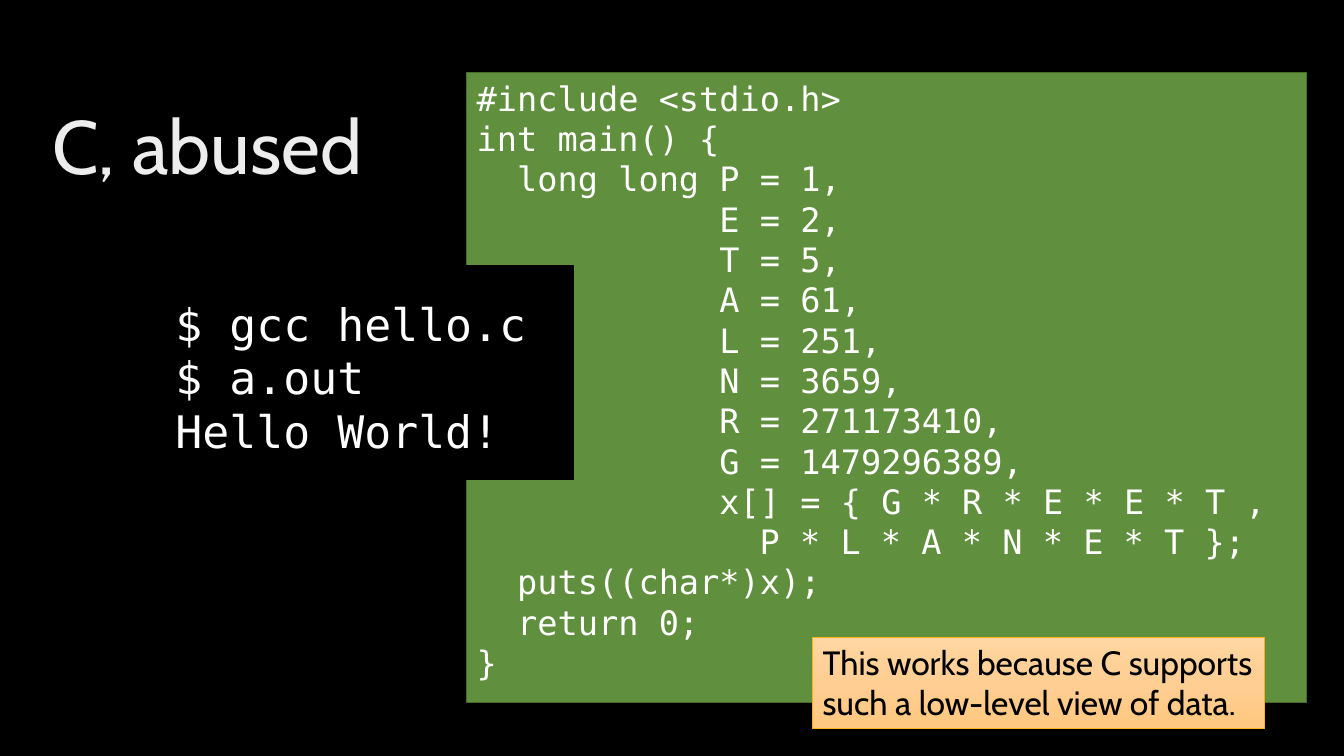
from dataclasses import dataclass

from lxml.etree import SubElement
from pptx import Presentation
from pptx.dml.color import RGBColor
from pptx.dml.fill import FillFormat
from pptx.enum.shapes import MSO_SHAPE
from pptx.enum.text import MSO_ANCHOR, MSO_AUTO_SIZE, PP_ALIGN
from pptx.oxml.ns import qn
from pptx.oxml.xmlchemy import BaseOxmlElement
from pptx.slide import Slide
from pptx.text.text import TextFrame
from pptx.util import Inches, Pt


@dataclass(frozen=True)
class Gradient:
    stops: tuple[tuple[int, str], ...]  # percent, colour
    angle: int  # clockwise degrees


@dataclass(frozen=True)
class Theme:
    background: str = "000000"
    code_fill: str = "608F3D"
    code_line: str = "476A2D"
    note_line: str = "FCB11C"
    light_text: str = "FFFFFF"
    dark_text: str = "000000"
    title_fill: Gradient = Gradient(((0, "BFBFBF"), (28, "EDEDED"), (100, "FFFFFF")), 80)
    note_fill: Gradient = Gradient(((0, "FFD5A1"), (50, "FFCE93"), (100, "FFC77F")), 90)
    prose_font: str = "Cabin"
    code_font: str = "DejaVu Sans Mono"
    title_size: int = 54
    terminal_size: int = 32
    body_size: int = 24


THEME = Theme()


@dataclass(frozen=True)
class Panel:
    box: tuple[float, float, float, float]
    fill: str | Gradient
    line: str
    text: str
    color: str
    font: str
    size: int
    line_width: float = 1
    insets: tuple[float, float, float, float] = (0.1, 0.05, 0.1, 0.05)
    anchor: MSO_ANCHOR = MSO_ANCHOR.TOP
    auto_size: MSO_AUTO_SIZE = MSO_AUTO_SIZE.NONE


CODE = """#include <stdio.h>
int main() {
  long long P = 1,
            E = 2,
            T = 5,
            A = 61,
            L = 251,
            N = 3659,
            R = 271173410,
            G = 1479296389,
            x[] = { G * R * E * E * T ,
\t\t         P * L * A * N * E * T };
  puts((char*)x);
  return 0;
}"""

TERMINAL = """$ gcc hello.c
$ a.out
Hello World!"""

PANELS = (
    # Source code
    Panel((4.63, 0.72, 8.33, 6.25), THEME.code_fill, THEME.code_line, CODE,
          THEME.light_text, THEME.code_font, THEME.body_size),
    # Terminal session
    Panel((1.54, 2.64, 4.15, 2.12), THEME.background, THEME.background, TERMINAL,
          THEME.light_text, THEME.code_font, THEME.terminal_size,
          insets=(0.2, 0.3, 0.1, 0.05)),
    # Explanatory note
    Panel((8.06, 6.32, 4.48, 0.91), THEME.note_fill, THEME.note_line,
          "This works because C supports such a low-level view of data.",
          THEME.dark_text, THEME.prose_font, THEME.body_size, line_width=0.5,
          auto_size=MSO_AUTO_SIZE.SHAPE_TO_FIT_TEXT),
)


def apply_fill(fill: FillFormat, owner: BaseOxmlElement, paint: str | Gradient) -> None:
    """Fill with a plain colour or a gradient; owner holds the fill element."""
    if isinstance(paint, str):
        fill.solid()
        fill.fore_color.rgb = RGBColor.from_string(paint)
        return
    fill.gradient()
    fill.gradient_angle = 360 - paint.angle
    stop_list = owner.find(qn("a:gradFill")).find(qn("a:gsLst"))
    for old_stop in list(stop_list):
        stop_list.remove(old_stop)
    for percent, color in paint.stops:
        stop = SubElement(stop_list, qn("a:gs"), pos=str(percent * 1000))
        SubElement(stop, qn("a:srgbClr"), val=color)


def write_lines(frame: TextFrame, text: str, font: str, size: int,
                paint: str | Gradient, spacing: float = 1.0) -> None:
    """Write each line of text as a left-aligned paragraph."""
    frame.word_wrap = True
    for index, line in enumerate(text.split("\n")):
        paragraph = frame.add_paragraph() if index else frame.paragraphs[0]
        paragraph.alignment = PP_ALIGN.LEFT
        paragraph.line_spacing = spacing
        run = paragraph.add_run()
        run.text = line
        run.font.name = font
        run.font.size = Pt(size)
        apply_fill(run.font.fill, run.font._element, paint)


def add_title(slide: Slide) -> None:
    title = slide.shapes.add_textbox(Inches(0.42), Inches(0.76), Inches(3.54), Inches(1.45))
    title.text_frame.vertical_anchor = MSO_ANCHOR.MIDDLE
    write_lines(title.text_frame, "C, abused", THEME.prose_font, THEME.title_size,
                THEME.title_fill, spacing=0.9)


def add_panel(slide: Slide, panel: Panel) -> None:
    shape = slide.shapes.add_shape(MSO_SHAPE.RECTANGLE, *map(Inches, panel.box))
    shape.shadow.inherit = False
    apply_fill(shape.fill, shape._element.spPr, panel.fill)
    shape.line.color.rgb = RGBColor.from_string(panel.line)
    shape.line.width = Pt(panel.line_width)
    frame = shape.text_frame
    (frame.margin_left, frame.margin_top,
     frame.margin_right, frame.margin_bottom) = map(Inches, panel.insets)
    frame.vertical_anchor = panel.anchor
    frame.auto_size = panel.auto_size
    write_lines(frame, panel.text, panel.font, panel.size, panel.color)


def main() -> None:
    presentation = Presentation()
    presentation.slide_width = Inches(13.33)
    presentation.slide_height = Inches(7.5)
    slide = presentation.slides.add_slide(presentation.slide_layouts[6])
    slide.background.fill.solid()
    slide.background.fill.fore_color.rgb = RGBColor.from_string(THEME.background)

    add_title(slide)
    for panel in PANELS:
        add_panel(slide, panel)
    presentation.save("out.pptx")


if __name__ == "__main__":
    main()
